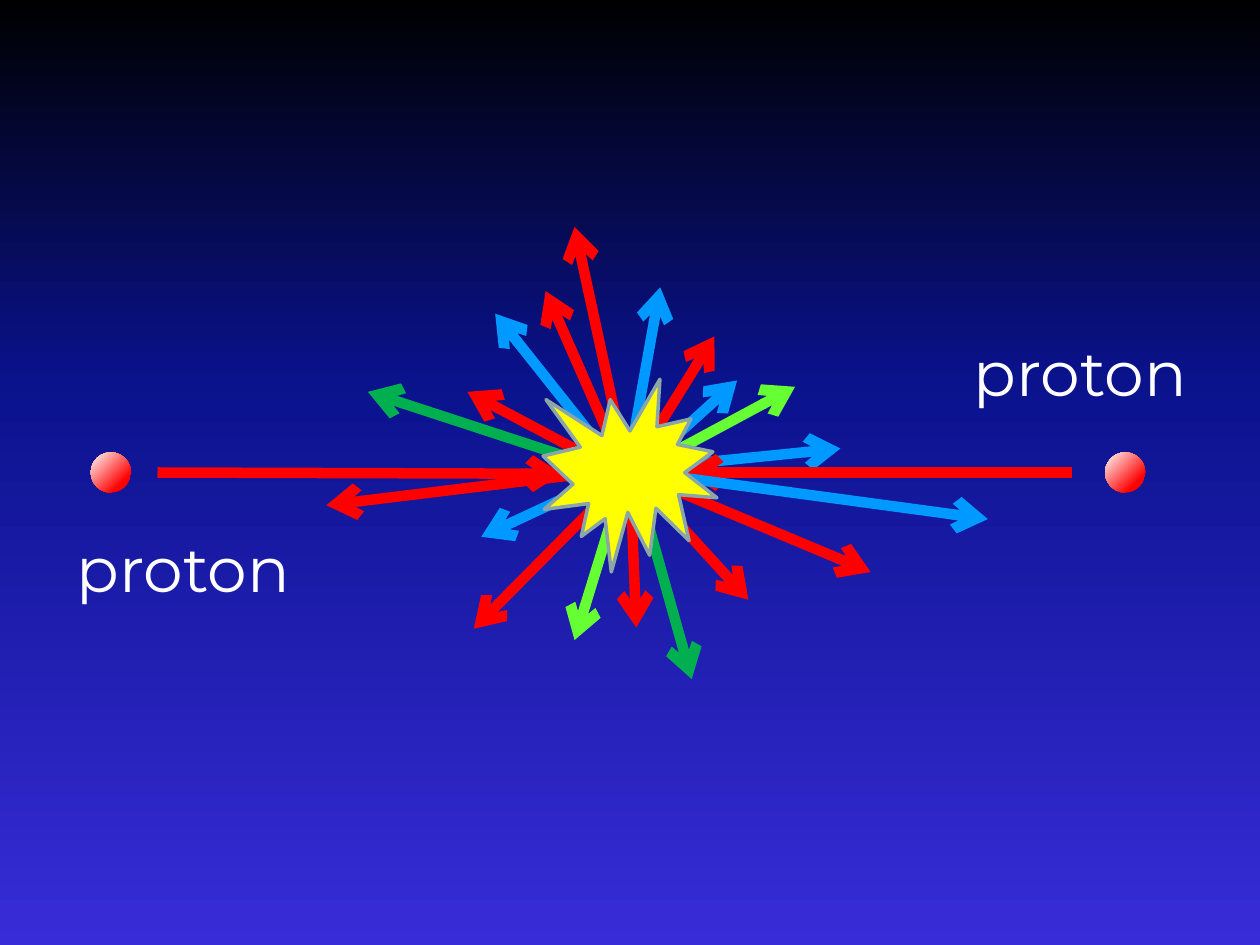
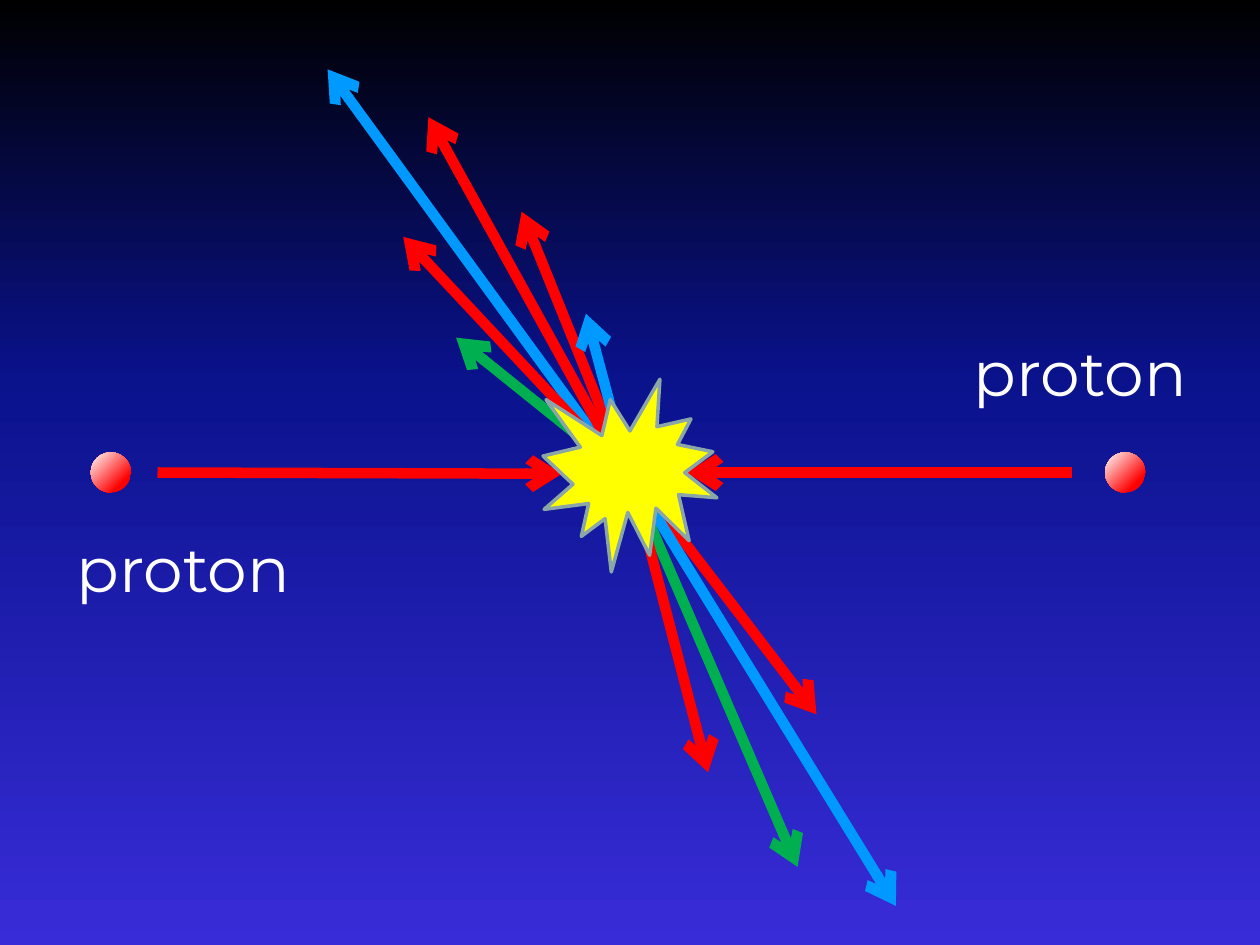
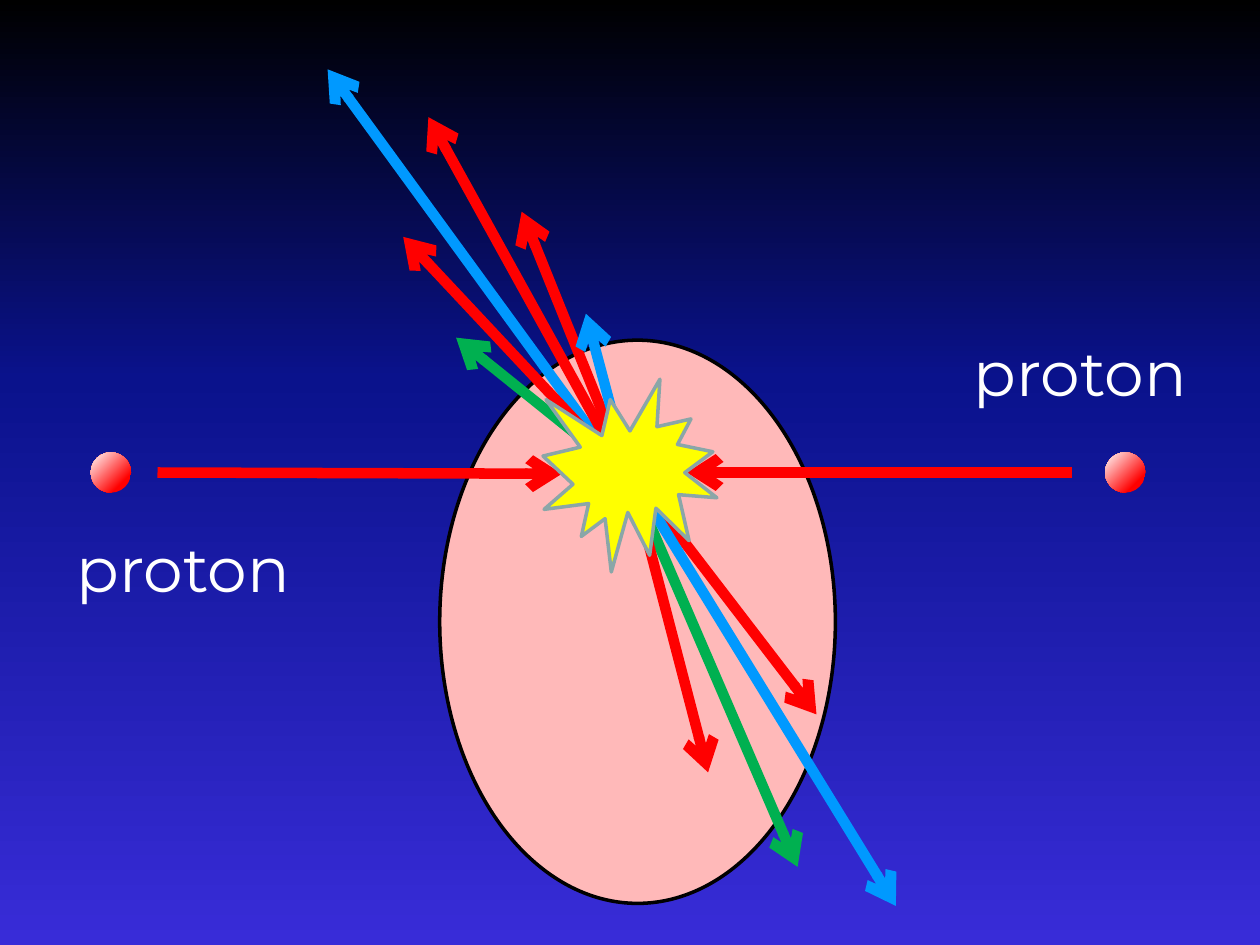
from lxml import etree
from pptx import Presentation
from pptx.dml.color import RGBColor
from pptx.enum.shapes import MSO_CONNECTOR, MSO_SHAPE
from pptx.enum.text import MSO_AUTO_SIZE
from pptx.oxml.ns import qn
from pptx.util import Inches, Pt

STRAIGHT = MSO_CONNECTOR.STRAIGHT
OVAL = MSO_SHAPE.OVAL
BURST = MSO_SHAPE.EXPLOSION1
FIT_SHAPE = MSO_AUTO_SIZE.SHAPE_TO_FIT_TEXT

COLORS = {
    "red": "FF0000", "blue": "0099FF", "green": "00B050", "lime": "66FF33",
    "white": "FFFFFF", "black": "000000", "navy": "0A128C", "violet": "382CD8",
    "yellow": "FFFF00", "gray": "8AA6A8", "pink": "FFB9B9",
}
FONT = "Montserrat"
SLIDE_WIDTH, SLIDE_HEIGHT = 10, 7.5
PROTON_SIZE = 0.32
PROTON_LEFTS = (0.72, 8.77)
LABEL_PLACES = ((0.51, 4.15), (7.63, 2.6))

# Each arrow: colour, start, tip (inches)
BEAMS = [
    ("red", (1.25, 3.75), (4.46, 3.76)),
    ("red", (8.51, 3.75), (5.45, 3.75)),
]
SPRAY_BEHIND_BEAMS = [
    ("blue", (4.99, 3.73), (6.67, 3.56)),
    ("blue", (4.97, 3.8), (3.93, 2.49)),
    ("red", (4.99, 3.79), (4.56, 1.8)),
    ("red", (4.98, 3.79), (4.33, 2.31)),
    ("green", (5, 3.79), (2.92, 3.11)),
    ("blue", (4.98, 3.73), (5.24, 2.28)),
    ("red", (4.99, 3.79), (3.71, 3.11)),
]
SPRAY_OVER_BEAMS = [
    ("green", (5.03, 3.75), (5.49, 5.39)),
    ("red", (5, 3.74), (6.91, 4.54)),
    ("blue", (4.96, 3.73), (7.84, 4.12)),
    ("red", (5, 3.75), (5.05, 4.98)),
    ("lime", (4.99, 3.78), (6.31, 3.07)),
    ("blue", (5.01, 3.78), (5.85, 3.02)),
    ("red", (4.98, 3.78), (5.67, 2.67)),
    ("lime", (4.96, 3.78), (4.56, 5.08)),
    ("red", (4.99, 3.72), (5.94, 4.76)),
    ("red", (4.97, 3.72), (2.59, 4.01)),
    ("blue", (4.98, 3.72), (3.82, 4.26)),
    ("red", (4.97, 3.77), (3.76, 4.99)),
]
UPPER_JET = [
    ("blue", (4.97, 3.8), (2.6, 0.55)),
    ("red", (4.99, 3.79), (4.14, 1.68)),
    ("red", (4.98, 3.79), (3.4, 0.93)),
    ("green", (5, 3.79), (3.62, 2.68)),
    ("blue", (4.98, 3.73), (4.65, 2.49)),
    ("red", (4.99, 3.79), (3.2, 1.88)),
]
LOWER_JET = [
    ("green", (4.99, 3.77), (6.33, 6.88)),
    ("red", (5, 3.74), (6.48, 5.67)),
    ("blue", (4.99, 3.74), (7.11, 7.19)),
    ("red", (5, 3.75), (5.62, 6.13)),
]
SPRAY = SPRAY_BEHIND_BEAMS + BEAMS + SPRAY_OVER_BEAMS
JETS = UPPER_JET + BEAMS + LOWER_JET
BURST_OUTLINE = (BURST, (4.31, 3.01, 1.38, 1.53), "yellow", "gray")
JET_OVAL = (OVAL, (3.49, 2.7, 3.14, 4.47), "pink", "black")

# Each slide: shapes behind the arrows, arrows
SLIDES = [([], SPRAY), ([], JETS), ([JET_OVAL], JETS)]


def set_gradient(owner, fill, stops, direction):
    """Fill with (percent, colour) stops; direction is the a:lin or a:path element."""
    fill.gradient()
    gradient = owner.element.find(".//" + qn("a:gradFill"))
    for child in list(gradient):
        gradient.remove(child)
    stop_list = etree.SubElement(gradient, qn("a:gsLst"))
    for percent, color in stops:
        stop = etree.SubElement(stop_list, qn("a:gs"), pos=str(percent * 1000))
        etree.SubElement(stop, qn("a:srgbClr"), val=COLORS[color])
    gradient.append(direction)


def write_text(slide, text, left, top, width=2.01, height=0.71, size=36, color="white"):
    box = slide.shapes.add_textbox(*map(Inches, (left, top, width, height)))
    box.text_frame.word_wrap = False
    box.text_frame.auto_size = FIT_SHAPE
    run = box.text_frame.paragraphs[0].add_run()
    run.text = text
    run.font.name = FONT
    run.font.size = Pt(size)
    run.font.color.rgb = RGBColor.from_string(COLORS[color])


presentation = Presentation()
presentation.slide_width = Inches(SLIDE_WIDTH)
presentation.slide_height = Inches(SLIDE_HEIGHT)
blank_layout = presentation.slide_layouts[6]

master = presentation.slide_master
downward = etree.Element(qn("a:lin"), ang="5400000", scaled="0")
set_gradient(master, master.background.fill,
             [(0, "black"), (40, "navy"), (100, "violet")], downward)

for backdrop, arrows in SLIDES:
    slide = presentation.slides.add_slide(blank_layout)
    shapes = slide.shapes

    for outlines, tracks in ((backdrop, arrows), ([BURST_OUTLINE], [])):
        for kind, place, fill_color, line_color in outlines:
            shape = shapes.add_shape(kind, *map(Inches, place))
            shape.shadow.inherit = False
            shape.fill.solid()
            shape.fill.fore_color.rgb = RGBColor.from_string(COLORS[fill_color])
            shape.line.color.rgb = RGBColor.from_string(COLORS[line_color])
            shape.line.width = Pt(2)

        for color, start, tip in tracks:
            arrow = shapes.add_connector(STRAIGHT, *map(Inches, start + tip))
            arrow.line.color.rgb = RGBColor.from_string(COLORS[color])
            arrow.line.width = Pt(6)
            etree.SubElement(arrow.line._get_or_add_ln(), qn("a:tailEnd"), type="arrow")
            etree.SubElement(arrow.element.spPr, qn("a:effectLst"))

    for left in PROTON_LEFTS:
        proton = shapes.add_shape(OVAL, Inches(left), Inches((SLIDE_HEIGHT - PROTON_SIZE) / 2),
                                  Inches(PROTON_SIZE), Inches(PROTON_SIZE))
        proton.shadow.inherit = False
        proton.line.fill.background()
        from_corner = etree.Element(qn("a:path"), path="circle")
        etree.SubElement(from_corner, qn("a:fillToRect"), r="100000", b="100000")
        set_gradient(proton, proton.fill, [(0, "white"), (77, "red")], from_corner)

    for left, top in LABEL_PLACES:
        write_text(slide, "proton", left, top)

presentation.save("out.pptx")
